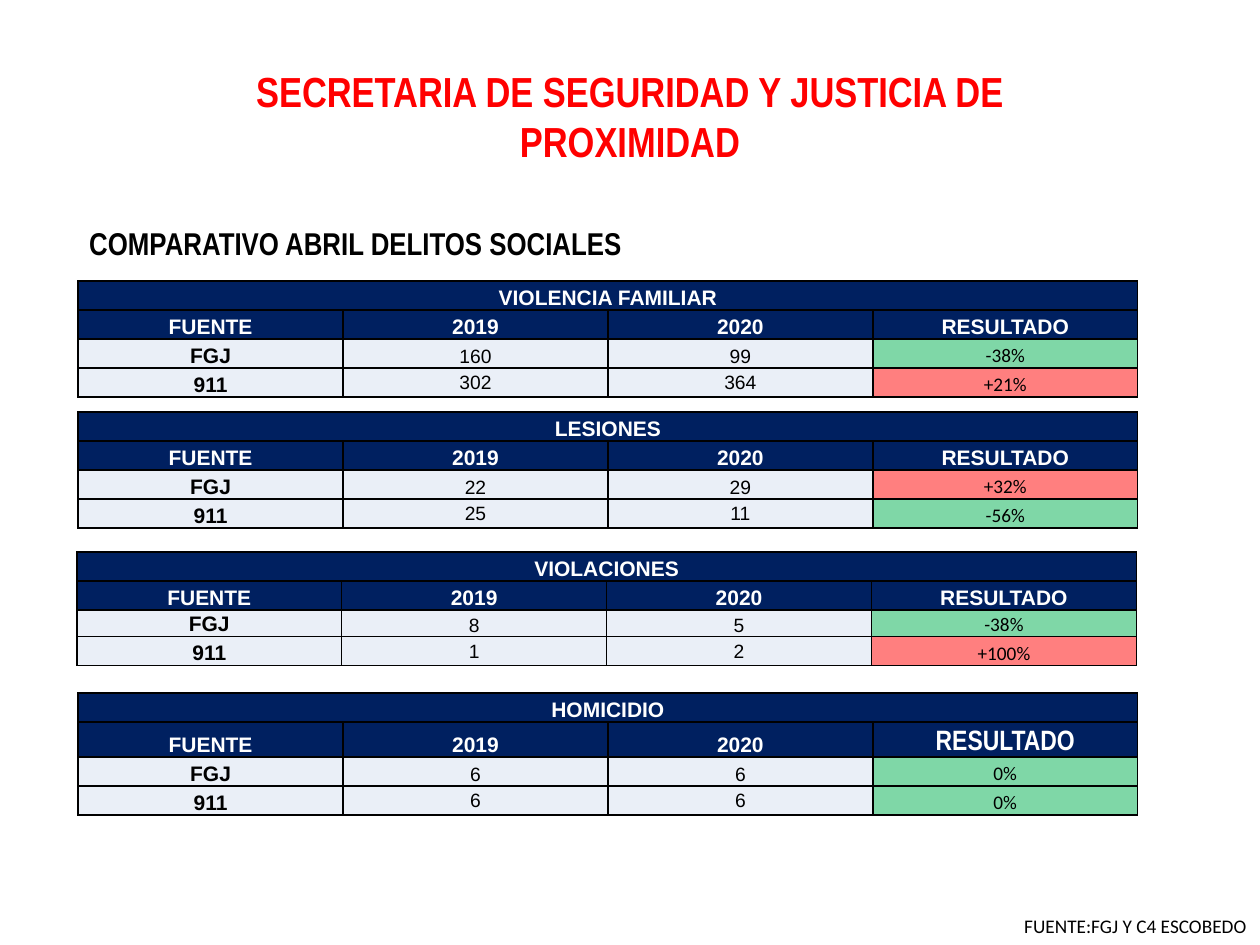
import pptx
import pptx.util
from lxml import etree
from pptx.dml.color import RGBColor
from pptx.enum.text import MSO_ANCHOR, MSO_AUTO_SIZE, PP_ALIGN
from pptx.oxml.ns import qn
from pptx.util import Inches

RED = RGBColor(0xFF, 0x00, 0x00)
GREEN = RGBColor(0x00, 0xB0, 0x50)
NAVY = RGBColor(0x00, 0x20, 0x60)
PALE = RGBColor(0xEA, 0xEF, 0xF7)
BLACK = RGBColor(0x00, 0x00, 0x00)
WHITE = RGBColor(0xFF, 0xFF, 0xFF)

HEADINGS = ("FUENTE", "2019", "2020", "RESULTADO")


class CrimeSlide:
    """Holds the slide and the style of its texts and tables."""

    table_width = 8.41
    row_height = 0.23
    inset = 0.01

    def __init__(self, slide):
        self.slide = slide

    def format_text(self, frame, size, font, color, bold, align):
        paragraph = frame.paragraphs[0]
        paragraph.alignment = align
        for run in paragraph.runs:
            run.font.size = pptx.util.Pt(size)
            run.font.name = font
            run.font.bold = bold
            run.font.color.rgb = color

    def text(self, words, left, top, width, height, size, font,
             color=BLACK, bold=True, align=PP_ALIGN.LEFT, wrap=True):
        box = self.slide.shapes.add_textbox(
            Inches(left), Inches(top), Inches(width), Inches(height))
        frame = box.text_frame
        frame.word_wrap = wrap
        frame.auto_size = MSO_AUTO_SIZE.SHAPE_TO_FIT_TEXT
        frame.text = words
        self.format_text(frame, size, font, color, bold, align)

    def borders(self, cell):
        properties = cell._tc.get_or_add_tcPr()
        for index, side in enumerate(("lnL", "lnR", "lnT", "lnB")):
            line = etree.Element(qn(f"a:{side}"), w=str(pptx.util.Pt(1)))
            fill = etree.SubElement(line, qn("a:solidFill"))
            etree.SubElement(fill, qn("a:srgbClr"), val=str(BLACK))
            properties.insert(index, line)

    def cell(self, cell, words, fill, color=BLACK, size=12, font="Arial",
             bold=True, anchor=MSO_ANCHOR.BOTTOM, see_through=False):
        cell.text = words
        cell.vertical_anchor = anchor
        cell.margin_left = cell.margin_right = cell.margin_top = Inches(self.inset)
        cell.margin_bottom = 0
        cell.fill.solid()
        cell.fill.fore_color.rgb = fill
        if see_through:
            shade = cell._tc.tcPr.find(f".//{qn('a:srgbClr')}")
            etree.SubElement(shade, qn("a:alpha"), val="50000")
        self.borders(cell)
        self.format_text(cell.text_frame, size, font, color, bold, PP_ALIGN.CENTER)

    def crime_table(self, crime, left, top, fgj, calls_911, result_style):
        rows = (("FGJ", *fgj), ("911", *calls_911))
        table = self.slide.shapes.add_table(
            4, 4, Inches(left), Inches(top),
            Inches(self.table_width), Inches(4 * self.row_height)).table
        table.first_row = table.horz_banding = False
        for row in table.rows:
            row.height = Inches(self.row_height)

        # Crime name and column headings
        for column in range(4):
            self.cell(table.cell(0, column), "" if column else crime, NAVY, WHITE)
            style = result_style if column == 3 else {}
            self.cell(table.cell(1, column), HEADINGS[column], NAVY, WHITE, **style)
        table.cell(0, 0).merge(table.cell(0, 3))

        # Counts per source; a rise is red, anything else green
        anchors = (MSO_ANCHOR.BOTTOM, MSO_ANCHOR.MIDDLE)
        for index, (source, *counts, change) in enumerate(rows):
            row = index + 2
            self.cell(table.cell(row, 0), source, PALE)
            for column, count in enumerate(counts, 1):
                self.cell(table.cell(row, column), count, PALE, size=11,
                          bold=False, anchor=anchors[index])
            self.cell(table.cell(row, 3), change,
                      RED if change.startswith("+") else GREEN,
                      size=11, font="Calibri", bold=False, see_through=True)
        return table


def main():
    presentation = pptx.Presentation()
    presentation.slide_width = Inches(10)
    presentation.slide_height = Inches(7.5)
    page = CrimeSlide(presentation.slides.add_slide(presentation.slide_layouts[6]))

    # Title and subtitle
    page.text("SECRETARIA DE SEGURIDAD Y JUSTICIA DE PROXIMIDAD",
              1.9, 0.47, 6.2, 0.91, 24, "Arial Narrow", RED, align=PP_ALIGN.CENTER)
    page.text("COMPARATIVO ABRIL DELITOS SOCIALES",
              0.61, 1.73, 7.38, 0.4, 18, "Arial Narrow")

    # One table per crime
    large = {"size": 16, "font": "Arial Narrow"}
    crimes = (
        ("VIOLENCIA FAMILIAR", 0.62, 2.23, ("160", "99", "-38%"), ("302", "364", "+21%"), {}),
        ("LESIONES", 0.62, 3.27, ("22", "29", "+32%"), ("25", "11", "-56%"), {}),
        ("VIOLACIONES", 0.61, 4.38, ("8", "5", "-38%"), ("1", "2", "+100%"), {}),
        ("HOMICIDIO", 0.62, 5.5, ("6", "6", "0%"), ("6", "6", "0%"), large),
    )
    for crime in crimes:
        table = page.crime_table(*crime)
        if crime[0] == "VIOLACIONES":
            table.rows[2].height = Inches(0.21)

    # Source note
    page.text("FUENTE:FGJ Y C4 ESCOBEDO", 8.03, 7.21, 1.98, 0.29, 11, "Calibri",
              bold=False, wrap=False)

    presentation.save("out.pptx")


if __name__ == "__main__":
    main()
